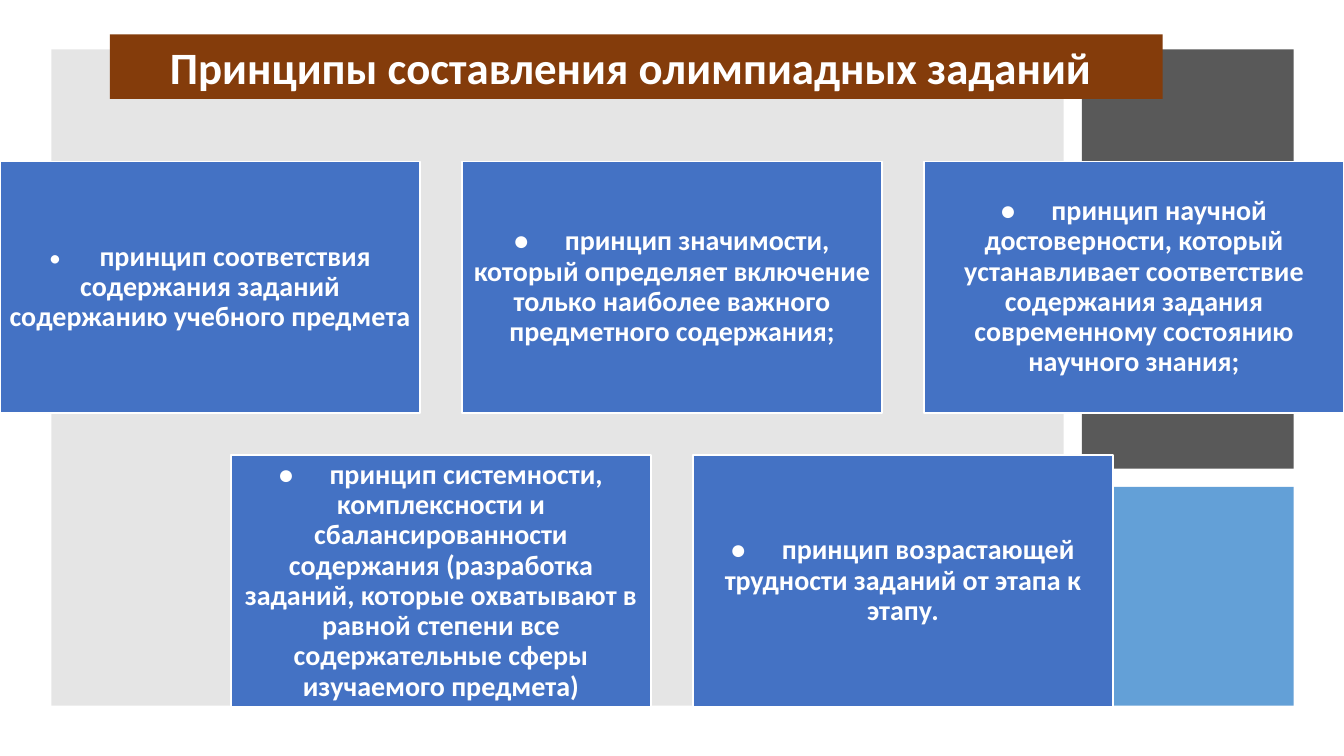
import pptx
import pptx.util
import pptx.dml.color
import pptx.enum.shapes
import pptx.enum.text
import pptx.oxml.ns
import lxml.etree

WIDTH, HEIGHT = 13.33, 7.5
FONT = "Calibri"
WHITE, CARD_BLUE, TITLE_BROWN = "FFFFFF", "4472C4", "843C0B"

TITLE = "Принципы составления олимпиадных заданий "
TITLE_BOX = (1.09, 0.34, 10.44, 0.64)

# left, top, width, height, colour, opacity in percent
BACKDROP = [
    (0.51, 0.49, 10.04, 6.51, "808080", 20),
    (10.73, 0.49, 2.1, 4.16, "595959", 100),
    (10.73, 4.83, 2.1, 2.17, "5B9BD5", 95),
]

BULLET = "•\t"
CARD_ROWS = [
    [
        "принцип соответствия содержания заданий содержанию учебного предмета",
        "принцип значимости, который определяет включение только наиболее важного предметного содержания;",
        "принцип научной достоверности, который устанавливает соответствие содержания задания "
        "современному состоянию научного знания;",
    ],
    [
        "принцип системности, комплексности и сбалансированности содержания (разработка заданий, "
        "которые охватывают в равной степени все содержательные сферы изучаемого предмета)",
        "принцип возрастающей трудности заданий от этапа к этапу.",
    ],
]
GAP_SHARE = 0.1   # gap between cards, as a share of card width
CARD_WIDTH = WIDTH / (3 + 2 * GAP_SHARE)
CARD_HEIGHT = 0.6 * CARD_WIDTH
GAP = GAP_SHARE * CARD_WIDTH
CARDS_TOP = 1.6


def inches(*lengths):
    return [pptx.util.Inches(length) for length in lengths]


def colour(hex_string):
    return pptx.dml.color.RGBColor.from_string(hex_string)


def paint(shape, fill, opacity=100):
    shape.fill.solid()
    shape.fill.fore_color.rgb = colour(fill)
    if opacity < 100:
        fill_colour = shape.fill._xPr.find(".//" + pptx.oxml.ns.qn("a:srgbClr"))
        alpha = lxml.etree.SubElement(fill_colour, pptx.oxml.ns.qn("a:alpha"))
        alpha.set("val", str(opacity * 1000))


def add_rectangle(slide, box, fill, opacity=100):
    shape = slide.shapes.add_shape(pptx.enum.shapes.MSO_SHAPE.RECTANGLE, *inches(*box))
    shape.shadow.inherit = False
    shape.line.fill.background()
    paint(shape, fill, opacity)
    return shape


def format_run(run, size, bold=True):
    run.font.name = FONT
    run.font.size = pptx.util.Pt(size)
    run.font.bold = bold
    run.font.color.rgb = colour(WHITE)


def set_frame(shape, anchor, inset_x, inset_y, line_spacing):
    """Set the text frame and return its centred first paragraph."""
    frame = shape.text_frame
    frame.word_wrap = True
    frame.auto_size = pptx.enum.text.MSO_AUTO_SIZE.NONE
    frame.vertical_anchor = anchor
    frame.margin_left = frame.margin_right = pptx.util.Inches(inset_x)
    frame.margin_top = frame.margin_bottom = pptx.util.Inches(inset_y)
    paragraph = frame.paragraphs[0]
    paragraph.alignment = pptx.enum.text.PP_ALIGN.CENTER
    paragraph.line_spacing = line_spacing
    return paragraph


def add_card(slide, left, top, text, small_bullet):
    card = add_rectangle(slide, (left, top, CARD_WIDTH, CARD_HEIGHT), CARD_BLUE)
    card.line.color.rgb = colour(WHITE)
    card.line.width = pptx.util.Pt(1)
    inset = 0.07 if small_bullet else 0.08
    paragraph = set_frame(card, pptx.enum.text.MSO_ANCHOR.MIDDLE, inset, inset, 0.9)
    if small_bullet:
        paragraph.text = BULLET
        format_run(paragraph.runs[0], 17, bold=False)
        run = paragraph.add_run()
        run.text = text
    else:
        paragraph.text = BULLET + text
        run = paragraph.runs[0]
    format_run(run, 20)


def place_title(slide):
    title = slide.shapes.title
    title.left, title.top, title.width, title.height = inches(*TITLE_BOX)
    paint(title, TITLE_BROWN)
    title.text_frame.text = TITLE
    paragraph = set_frame(title, pptx.enum.text.MSO_ANCHOR.TOP, 0.1, 0.05, 1.0)
    paragraph.space_before = pptx.util.Pt(0)
    format_run(paragraph.runs[0], 32)
    slide.shapes._spTree.append(title._element)  # bring to front


def main():
    presentation = pptx.Presentation()
    presentation.slide_width, presentation.slide_height = inches(WIDTH, HEIGHT)
    slide = presentation.slides.add_slide(presentation.slide_layouts[5])

    for *box, fill, opacity in BACKDROP:
        add_rectangle(slide, box, fill, opacity)

    for row, texts in enumerate(CARD_ROWS):
        row_width = len(texts) * (CARD_WIDTH + GAP) - GAP
        for column, text in enumerate(texts):
            left = (WIDTH - row_width) / 2 + column * (CARD_WIDTH + GAP)
            top = CARDS_TOP + row * (CARD_HEIGHT + GAP)
            add_card(slide, left, top, text, small_bullet=(row == column == 0))

    place_title(slide)
    presentation.save("out.pptx")


if __name__ == "__main__":
    main()
